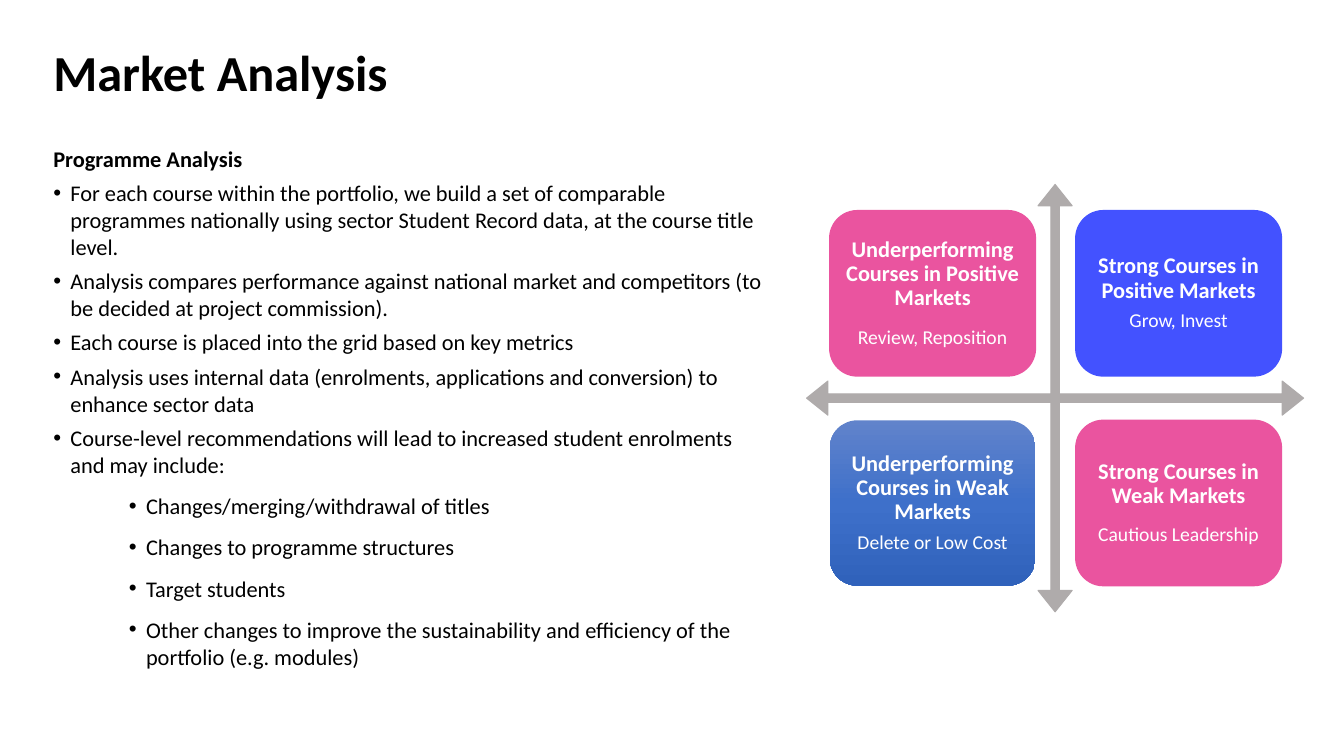
from copy import deepcopy

from lxml import etree
from pptx import Presentation
from pptx.dml.color import RGBColor
from pptx.enum.shapes import MSO_SHAPE
from pptx.enum.text import MSO_ANCHOR, PP_ALIGN
from pptx.oxml.ns import qn
from pptx.util import Inches, Pt

ROUNDED = MSO_SHAPE.ROUNDED_RECTANGLE
QUAD_ARROW = MSO_SHAPE.QUAD_ARROW
CENTER = PP_ALIGN.CENTER
MIDDLE = MSO_ANCHOR.MIDDLE

FONT = "Calibri"
COLORS = {
    "text": "000000",
    "light": "FFFFFF",
    "axes": "AFABAB",
    "pink": "EA549F",
    "blue": "4352FF",
}
WEAK_GRADIENT = [(0, "6183CB"), (0.5, "3E70CA"), (1, "3062BB")]

MARGIN = 0.43
GRID_LEFT, GRID_TOP = 8.23, 2.09
COLUMN_STEP, ROW_STEP = 2.44, 2.08
CARD_WIDTH, CARD_HEIGHT = 2.04, 1.64

POINTS = [
    "For each course within the portfolio, we build a set of comparable programmes "
    "nationally using sector Student Record data, at the course title level.",
    "Analysis compares performance against national market and competitors "
    "(to be decided at project commission).",
    "Each course is placed into the grid based on key metrics",
    "Analysis uses internal data (enrolments, applications and conversion) "
    "to enhance sector data",
    "Course-level recommendations will lead to increased student enrolments "
    "and may include:",
]
RECOMMENDATIONS = [
    "Changes/merging/withdrawal of titles",
    "Changes to programme structures",
    "Target students",
    "Other changes to improve the sustainability and efficiency of the portfolio "
    "(e.g. modules)",
]
QUADRANTS = [
    (0, 0, "Underperforming Courses in Positive Markets", "Review, Reposition", "pink", 12),
    (1, 0, "Strong Courses in Positive Markets", "Grow, Invest", "blue", 5.6),
    (0, 1, "Underperforming Courses in Weak Markets", "Delete or Low Cost", None, 5.6),
    (1, 1, "Strong Courses in Weak Markets", "Cautious Leadership", "pink", 12),
]


def rgb(name):
    return RGBColor.from_string(COLORS[name])


def add_text_frame(slide, left, top, width, height):
    frame = slide.shapes.add_textbox(*map(Inches, (left, top, width, height))).text_frame
    frame.word_wrap = True
    return frame


def write(frame, text, size, color="text", bold=False, after=0, before=0,
          spacing=1.0, align=None, indent=None):
    first = frame.paragraphs[0]
    paragraph = frame.add_paragraph() if first.runs else first
    paragraph.add_run().text = text
    paragraph.alignment = align
    paragraph.line_spacing = spacing
    paragraph.space_before = Pt(before)
    paragraph.space_after = Pt(after)
    if indent is not None:
        properties = paragraph._p.get_or_add_pPr()
        properties.set("marL", str(Inches(indent)))
        properties.set("indent", str(Inches(-0.17)))
        etree.SubElement(properties, qn("a:buFont")).set("typeface", "Arial")
        etree.SubElement(properties, qn("a:buChar")).set("char", "•")
    font = paragraph.font
    font.name, font.size, font.bold = FONT, Pt(size), bold
    font.color.rgb = rgb(color)


def add_panel(slide, preset, left, top, width, height, color):
    panel = slide.shapes.add_shape(preset, *map(Inches, (left, top, width, height)))
    panel.shadow.inherit = False
    if color:
        panel.fill.solid()
        panel.fill.fore_color.rgb = rgb(color)
        panel.line.color.rgb = rgb(color)
        panel.line.width = Pt(1)
    else:
        fill_gradient(panel.fill)
        panel.line.fill.background()
    return panel


def fill_gradient(fill):
    fill.gradient()
    fill.gradient_angle = 270
    first_stop = fill.gradient_stops[0]._gs
    first_stop.addnext(deepcopy(first_stop))
    for stop, (position, color) in zip(fill.gradient_stops, WEAK_GRADIENT):
        stop.position = position
        stop.color.rgb = RGBColor.from_string(color)


def add_axes(slide):
    axes = add_panel(slide, QUAD_ARROW, 8, 1.83, 4.93, 4.24, "axes")
    axes.line.width = Pt(0.75)
    for index, share in enumerate((0.02, 0.04, 0.05)):
        axes.adjustments[index] = share


def add_quadrant(slide, column, row, heading, action, color, gap):
    card = add_panel(slide, ROUNDED, GRID_LEFT + column * COLUMN_STEP,
                     GRID_TOP + row * ROW_STEP, CARD_WIDTH, CARD_HEIGHT, color)
    frame = card.text_frame
    frame.word_wrap = True
    frame.vertical_anchor = MIDDLE
    frame.margin_left = frame.margin_right = Inches(0.07)
    frame.margin_top = frame.margin_bottom = Inches(0.07)
    for text, size, bold in ((heading, 16, True), (action, 14, False)):
        write(frame, text, size, "light", bold, after=gap, spacing=0.9, align=CENTER)


def main():
    prs = Presentation()
    prs.slide_width, prs.slide_height = Inches(13.33), Inches(7.5)
    slide = prs.slides.add_slide(prs.slide_layouts[6])

    title = add_text_frame(slide, MARGIN, 0.48, 12.48, 0.63)
    write(title, "Market Analysis", 36, bold=True, spacing=0.8)

    analysis = add_text_frame(slide, MARGIN, 1.39, 7.25, 5.13)
    write(analysis, "Programme Analysis", 16, bold=True, after=5.3)
    for point in POINTS:
        write(analysis, point, 16, after=5.3, indent=0.17)
    for recommendation in RECOMMENDATIONS:
        write(analysis, recommendation, 16, before=5, after=5.3, indent=0.92)

    add_axes(slide)
    for quadrant in QUADRANTS:
        add_quadrant(slide, *quadrant)

    prs.save("out.pptx")


if __name__ == "__main__":
    main()
